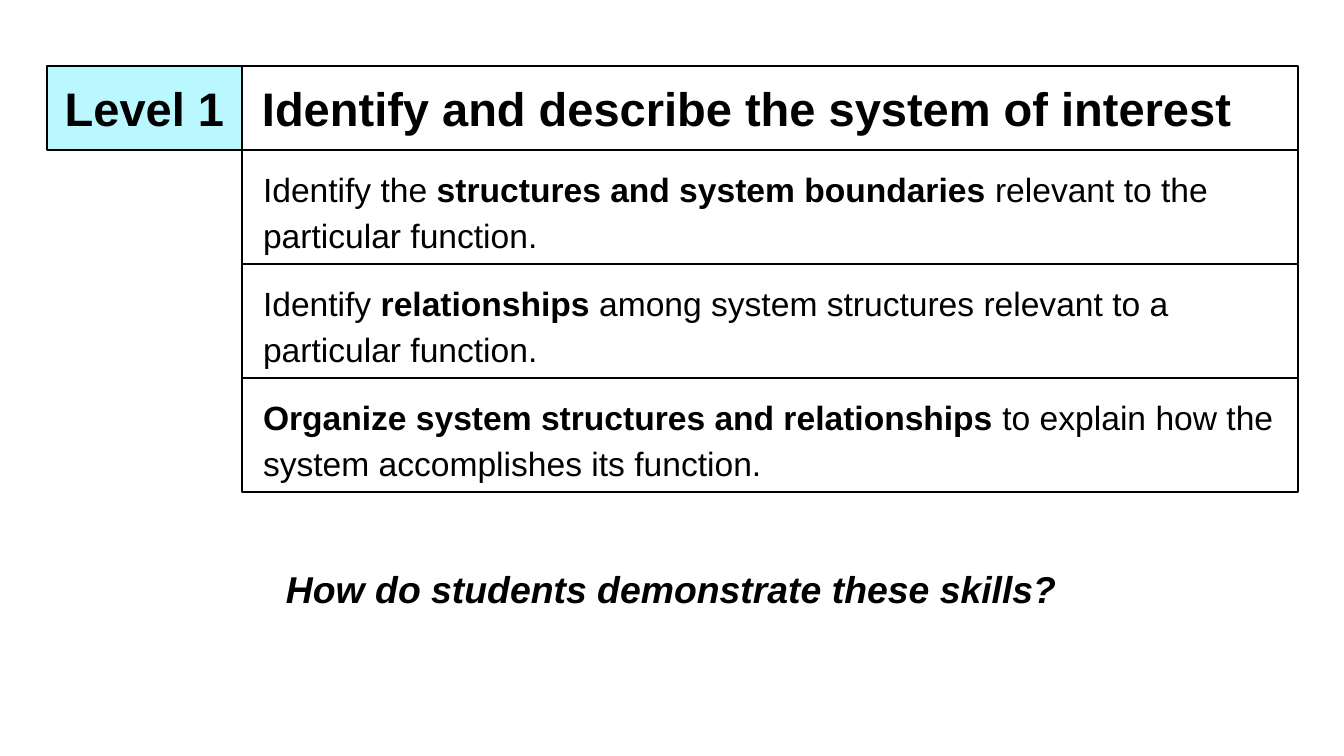
import dataclasses

import pptx
import pptx.dml.color
import pptx.enum.shapes
import pptx.enum.text
import pptx.util

PX = 914400 / 134.4  # EMU in one px
ALIGN = pptx.enum.text.PP_ALIGN
ANCHOR = pptx.enum.text.MSO_ANCHOR


@dataclasses.dataclass(frozen=True)
class Theme:
    font: str = "Arial"
    ink: str = "000000"
    paper: str = "FFFFFF"
    level_fill: str = "BAF8FF"
    heading_size: float = 25.2
    skill_size: float = 18
    question_size: float = 20
    border: float = 0.75


THEME = Theme()

# Each skill is a list of (text, bold) runs
SKILLS = [
    [("Identify the ", False), ("structures and system boundaries", True),
     (" relevant to the particular function.", False)],
    [("Identify ", False), ("relationships", True),
     (" among system structures relevant to a particular function.", False)],
    [("Organize system structures and relationships", True),
     (" to explain how the system accomplishes its function.", False)],
]
ROW_LEFT, ROW_TOP, ROW_WIDTH, ROW_HEIGHT = 242, 150, 1056, 114
HEADING_TOP, HEADING_HEIGHT = 66, 84
INSET = 13


def px(length):
    return pptx.util.Emu(round(length * PX))


def color(value):
    return pptx.dml.color.RGBColor.from_string(value)


def write(frame, runs, size, align=ALIGN.LEFT, indent=0, italic=None):
    """Fill the first paragraph run by run and return it."""
    paragraph = frame.paragraphs[0]
    paragraph.alignment = align
    paragraph.space_before = pptx.util.Pt(0)
    properties = paragraph._p.get_or_add_pPr()
    properties.set("marL", str(px(indent)))
    properties.set("indent", "0")
    for text, bold in runs:
        run = paragraph.add_run()
        run.text = text
        run.font.name = THEME.font
        run.font.size = pptx.util.Pt(size)
        run.font.bold = bold
        run.font.italic = italic
        run.font.color.rgb = color(THEME.ink)
    return paragraph


def style_box(box, fill, anchor):
    """Give a box its fill, thin border and even insets."""
    box.fill.solid()
    box.fill.fore_color.rgb = color(fill)
    box.line.color.rgb = color(THEME.ink)
    box.line.width = pptx.util.Pt(THEME.border)
    frame = box.text_frame
    frame.word_wrap = True
    frame.auto_size = pptx.enum.text.MSO_AUTO_SIZE.NONE
    frame.vertical_anchor = anchor
    frame.margin_left = frame.margin_right = px(INSET)
    frame.margin_top = frame.margin_bottom = px(INSET)
    return frame


def add_box(slide, left, top, width, height, fill, anchor):
    box = slide.shapes.add_shape(
        pptx.enum.shapes.MSO_SHAPE.RECTANGLE,
        px(left), px(top), px(width), px(height))
    box.shadow.inherit = False
    return style_box(box, fill, anchor)


def set_heading(slide, text):
    heading = slide.shapes.title
    heading.left, heading.top = px(233), px(HEADING_TOP)
    heading.width, heading.height = px(1065), px(HEADING_HEIGHT)
    frame = style_box(heading, THEME.paper, ANCHOR.MIDDLE)
    write(frame, [(text, True)], THEME.heading_size, indent=16)


def add_level(slide, text):
    frame = add_box(slide, 47, HEADING_TOP, ROW_LEFT - 47, HEADING_HEIGHT,
                    THEME.level_fill, ANCHOR.MIDDLE)
    write(frame, [(text, True)], THEME.heading_size, ALIGN.CENTER)


def add_skill(slide, row, runs):
    frame = add_box(slide, ROW_LEFT, ROW_TOP + row * ROW_HEIGHT,
                    ROW_WIDTH, ROW_HEIGHT, THEME.paper, ANCHOR.TOP)
    paragraph = write(frame, runs, THEME.skill_size, indent=8)
    paragraph.line_spacing = 1.15
    paragraph.space_after = pptx.util.Pt(12)


def add_question(slide, text):
    question = slide.shapes.add_textbox(px(245), px(560), px(853), px(59))
    question.text_frame.word_wrap = True
    write(question.text_frame, [(text, True)], THEME.question_size,
          ALIGN.CENTER, italic=True)


def main():
    deck = pptx.Presentation()
    deck.slide_width, deck.slide_height = px(1344), px(756)
    slide = deck.slides.add_slide(deck.slide_layouts.get_by_name("Title Only"))

    # Heading row
    set_heading(slide, "Identify and describe the system of interest")
    add_level(slide, "Level 1")

    # Skills stacked under the heading
    for row, runs in enumerate(SKILLS):
        add_skill(slide, row, runs)

    # Closing question
    add_question(slide, "How do students demonstrate these skills?")
    deck.save("out.pptx")


if __name__ == "__main__":
    main()
